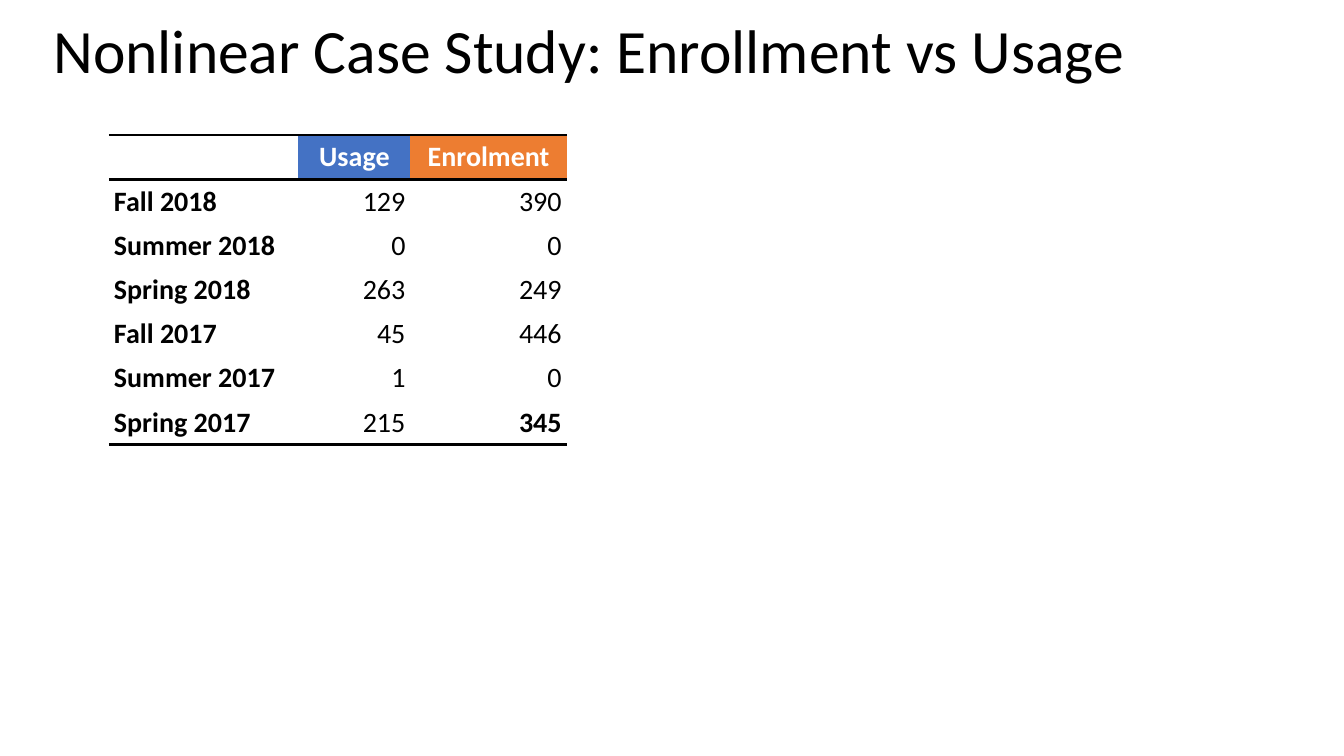
from dataclasses import dataclass

from lxml import etree
from pptx import Presentation
from pptx.dml.color import RGBColor
from pptx.enum.text import MSO_ANCHOR, PP_ALIGN
from pptx.oxml.ns import qn
from pptx.util import Pt

LEFT, CENTER, RIGHT = PP_ALIGN.LEFT, PP_ALIGN.CENTER, PP_ALIGN.RIGHT
MIDDLE, BOTTOM = MSO_ANCHOR.MIDDLE, MSO_ANCHOR.BOTTOM

BLACK = RGBColor(0x00, 0x00, 0x00)
WHITE = RGBColor(0xFF, 0xFF, 0xFF)
BLUE = RGBColor(0x44, 0x72, 0xC4)
ORANGE = RGBColor(0xED, 0x7D, 0x31)

FONT = "Calibri"
TITLE_SIZE = 44
TABLE_SIZE = 20
ROW_HEIGHT = 31.6
CELL_MARGIN = 3.6
RULE_WIDTH = 2


@dataclass
class Column:
    heading: str
    width: float
    fill: RGBColor
    align: PP_ALIGN


@dataclass
class Term:
    name: str
    usage: int
    enrolment: int
    bold_enrolment: bool = False


COLUMNS = [
    Column("", 135.4, WHITE, LEFT),
    Column("Usage", 80, BLUE, RIGHT),
    Column("Enrolment", 111.6, ORANGE, RIGHT),
]
TERMS = [
    Term("Fall 2018", 129, 390),
    Term("Summer 2018", 0, 0),
    Term("Spring 2018", 263, 249),
    Term("Fall 2017", 45, 446),
    Term("Summer 2017", 1, 0),
    Term("Spring 2017", 215, 345, bold_enrolment=True),
]


def add_run(paragraph, text: str, size: float, color: RGBColor, bold: bool = False) -> None:
    run = paragraph.add_run()
    run.text = text
    run.font.name = FONT
    run.font.size = Pt(size)
    run.font.bold = bold
    run.font.color.rgb = color


def set_borders(cell, top: bool, bottom: bool) -> None:
    """Rule the chosen edges in black and clear the others."""
    properties = cell._tc.get_or_add_tcPr()
    for edge, ruled in (("L", False), ("R", False), ("T", top), ("B", bottom)):
        line = etree.SubElement(properties, qn(f"a:ln{edge}"))
        if ruled:
            line.set("w", str(Pt(RULE_WIDTH)))
            fill = etree.SubElement(line, qn("a:solidFill"))
            etree.SubElement(fill, qn("a:srgbClr"), val=str(BLACK))
        else:
            line.set("w", "0")
            etree.SubElement(line, qn("a:noFill"))


def fill_cell(cell, text: str, align: PP_ALIGN, color: RGBColor, fill: RGBColor, bold: bool) -> None:
    cell.fill.solid()
    cell.fill.fore_color.rgb = fill
    cell.vertical_anchor = BOTTOM
    cell.margin_left = cell.margin_right = Pt(CELL_MARGIN)
    cell.margin_top = cell.margin_bottom = Pt(CELL_MARGIN)
    paragraph = cell.text_frame.paragraphs[0]
    paragraph.alignment = align
    if text:
        add_run(paragraph, text, TABLE_SIZE, color, bold)


def add_title(slide, text: str) -> None:
    box = slide.shapes.add_textbox(Pt(31), Pt(10.8), Pt(903), Pt(54.7))
    frame = box.text_frame
    frame.word_wrap = True
    frame.vertical_anchor = MIDDLE
    paragraph = frame.paragraphs[0]
    paragraph.line_spacing = 0.9
    add_run(paragraph, text, TITLE_SIZE, BLACK)


def add_term_table(slide) -> None:
    row_count = len(TERMS) + 1
    width = sum(column.width for column in COLUMNS)
    frame = slide.shapes.add_table(
        row_count, len(COLUMNS), Pt(77.8), Pt(96.5), Pt(width), Pt(ROW_HEIGHT * row_count)
    )
    table = frame.table
    table.first_row = table.horz_banding = False
    for row in table.rows:
        row.height = Pt(ROW_HEIGHT)

    for index, column in enumerate(COLUMNS):
        table.columns[index].width = Pt(column.width)

        # Rules above and below the heading, and under the last term
        for row_index in range(row_count):
            set_borders(
                table.cell(row_index, index),
                top=row_index in (0, 1),
                bottom=row_index in (0, row_count - 1),
            )

        # Heading and term values
        fill_cell(table.cell(0, index), column.heading, CENTER, WHITE, column.fill, True)
        for row_index, term in enumerate(TERMS, start=1):
            text = str((term.name, term.usage, term.enrolment)[index])
            bold = (True, False, term.bold_enrolment)[index]
            fill_cell(table.cell(row_index, index), text, column.align, BLACK, WHITE, bold)


def main() -> None:
    presentation = Presentation()
    presentation.slide_width, presentation.slide_height = Pt(960), Pt(540)
    slide = presentation.slides.add_slide(presentation.slide_layouts[6])
    add_title(slide, "Nonlinear Case Study: Enrollment vs Usage")
    add_term_table(slide)
    presentation.save("out.pptx")


if __name__ == "__main__":
    main()
